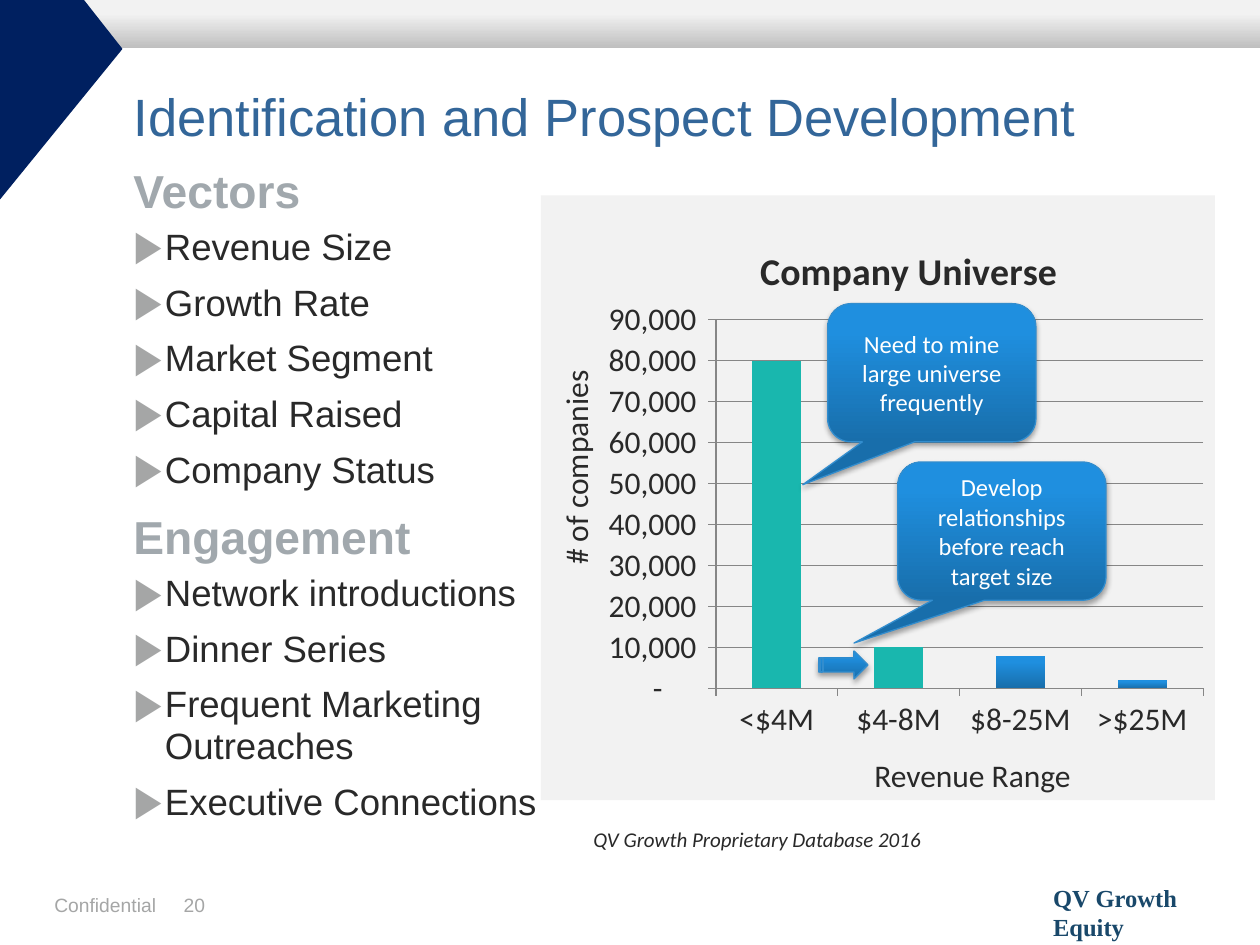
"""Build the identification and prospect development slide."""
import pptx
import pptx.chart.data
import pptx.dml.color
import pptx.enum.chart
import pptx.enum.shapes
import pptx.enum.text
import pptx.oxml
import pptx.oxml.ns
import pptx.util

Pt = pptx.util.Pt
Shape = pptx.enum.shapes.MSO_SHAPE
Anchor = pptx.enum.text.MSO_ANCHOR
qn = pptx.oxml.ns.qn

COLORS = {
    "navy": "002060", "title": "336699", "heading": "A1A8AD", "text": "292929",
    "muted": "A5A6A6", "panel": "F2F2F2", "band": "BFBFBF", "white": "FFFFFF",
    "brand": "19486A", "teal": "19B7AE", "deep": "186EAB", "bright": "1F8FDF",
    "edge": "328DCE", "grid": "868686",
}
SECTIONS = {
    "Vectors": ["Revenue Size", "Growth Rate", "Market Segment", "Capital Raised",
                "Company Status"],
    "Engagement": ["Network introductions", "Dinner Series",
                   "Frequent Marketing Outreaches", "Executive Connections"],
}
UNIVERSE = {"<$4M": 80000, "$4-8M": 10000, "$8-25M": 8000, ">$25M": 2000}
HEADING = {"line_spacing": 0.75, "space_after": Pt(6)}
ITEM = {"line_spacing": 0.95, "space_after": Pt(8)}
FLUSH = dict.fromkeys(("margin_left", "margin_top", "margin_right", "margin_bottom"), 0)


def assign(target, values):
    for name, value in values.items():
        setattr(target, name, value)


def rgb(color):
    return pptx.dml.color.RGBColor.from_string(COLORS[color])


def style_font(font, face, size, color, **values):
    assign(font, {"name": face, "size": Pt(size), **values})
    font.color.rgb = rgb(color)


def paint(fill, color):
    fill.solid()
    fill.fore_color.rgb = rgb(color)


def paint_gradient(fill, low, high, position):
    fill.gradient()
    fill.gradient_angle = 90
    for stop, color, place in zip(fill.gradient_stops, (low, high), (0, position)):
        stop.color.rgb = rgb(color)
        stop.position = place


def add_span(para, words, *font, **values):
    span = para.add_run()
    span.text = words
    style_font(span.font, *font, **values)


def add_text(page, bounds, words, face, size, color, frame=None, **values):
    box = page.shapes.add_textbox(*map(Pt, bounds))
    assign(box.text_frame, {"word_wrap": True, **(frame or {})})
    add_span(box.text_frame.paragraphs[0], words, face, size, color, **values)
    return box


def add_plain(page, bounds, color, line=None):
    box = page.shapes.add_shape(Shape.RECTANGLE, *map(Pt, bounds))
    box.shadow.inherit = False
    paint(box.fill, color)
    if line:
        box.line.color.rgb = rgb(line)
        box.line.width = Pt(2)
    else:
        box.line.fill.background()
    return box


def add_corner(page):
    builder = page.shapes.build_freeform(0, 0, scale=Pt(1))
    builder.add_line_segments([(47.5, 0), (70.5, 28), (0, 114.5)], close=True)
    corner = builder.convert_to_shape()
    corner.shadow.inherit = False
    paint(corner.fill, "navy")
    corner.line.fill.background()


def add_glossy(page, kind, bounds):
    shape = page.shapes.add_shape(kind, *map(Pt, bounds))
    paint_gradient(shape.fill, "deep", "bright", 0.8)
    shape.line.color.rgb = rgb("edge")
    shape.line.width = Pt(0.75)
    shape.shadow.inherit = False
    effects = shape._element.spPr.find(qn("a:effectLst"))
    effects.append(pptx.oxml.parse_xml(
        f'<a:outerShdw {pptx.oxml.ns.nsdecls("a")} blurRad="{Pt(3.1)}" '
        f'dist="{Pt(1.8)}" dir="5400000" rotWithShape="0"><a:srgbClr val="000000">'
        '<a:alpha val="35000"/></a:srgbClr></a:outerShdw>'))
    return shape


def add_callout(page, left, top, tip, words):
    callout = add_glossy(page, Shape.ROUNDED_RECTANGULAR_CALLOUT, (left, top, 119, 79))
    for index, value in enumerate((tip, 0.81, 0.17)):
        callout.adjustments[index] = value
    assign(callout.text_frame, {"word_wrap": True, "vertical_anchor": Anchor.MIDDLE})
    para = callout.text_frame.paragraphs[0]
    para.alignment = pptx.enum.text.PP_ALIGN.CENTER
    add_span(para, words, "Calibri", 14, "white")


def add_bullet(para):
    properties = para._p.get_or_add_pPr()
    properties.set("marL", str(Pt(18)))
    properties.set("indent", str(-Pt(18)))
    for tag, inner in (
            ("buClr", f'><a:srgbClr val="{COLORS["muted"]}"/></a:buClr>'),
            ("buSzPct", ' val="120000"/>'),
            ("buFont", ' typeface="Arial"/>'),
            ("buChar", ' char="▶"/>')):
        properties.append(pptx.oxml.parse_xml(
            f'<a:{tag} {pptx.oxml.ns.nsdecls("a")}{inner}'))


def add_outline(page):
    box = page.shapes.add_textbox(*map(Pt, (76.3, 100, 249, 391)))
    frame = box.text_frame
    assign(frame, {"word_wrap": True, **FLUSH})
    para = frame.paragraphs[0]
    for number, (heading, items) in enumerate(SECTIONS.items()):
        if number:
            para = frame.add_paragraph()
            para.space_before = Pt(9)
        assign(para, HEADING)
        add_span(para, heading, "Arial", 26.4, "heading", bold=True)
        for item in items:
            para = frame.add_paragraph()
            add_bullet(para)
            assign(para, ITEM)
            add_span(para, item, "Arial", 20.9, "text")


def set_layout(parent, **values):
    layout = parent.find(qn("c:layout"))
    if layout is None:
        layout = pptx.oxml.parse_xml(f'<c:layout {pptx.oxml.ns.nsdecls("c")}/>')
        parent.insert(0, layout)
    parts = "".join(f'<c:{name} val="{value}"/>' for name, value in values.items())
    layout.append(pptx.oxml.parse_xml(
        f'<c:manualLayout {pptx.oxml.ns.nsdecls("c")}>{parts}</c:manualLayout>'))


def add_universe_chart(page):
    data = pptx.chart.data.CategoryChartData()
    data.categories = list(UNIVERSE)
    data.add_series("Series 1", list(UNIVERSE.values()))
    chart = page.shapes.add_chart(pptx.enum.chart.XL_CHART_TYPE.COLUMN_CLUSTERED,
                                  *map(Pt, (337.7, 116.6, 357, 314.6)), data).chart
    chart.has_legend = False
    style_font(chart.font, "Calibri", 18, "text")
    title = chart.chart_title
    add_span(title.text_frame.paragraphs[0], "Company Universe",
             "Calibri", 21.6, "text", bold=True)
    set_layout(title._element, xMode="edge", yMode="edge", x=0.26, y=0.06)
    set_layout(chart._chartSpace.chart.plotArea, layoutTarget="inner", xMode="edge",
               yMode="edge", x=0.2, y=0.21, w=0.78, h=0.67)
    outside = pptx.enum.chart.XL_TICK_MARK.OUTSIDE
    values = chart.value_axis
    assign(values, {"minimum_scale": 0, "maximum_scale": 90000, "major_unit": 10000,
                    "has_major_gridlines": True})
    assign(values.tick_labels, {
        "number_format": r'_-* #,##0_-;\-* #,##0_-;_-* "-"??_-;_-@_',
        "number_format_is_linked": False})
    for axis in (values, chart.category_axis):
        axis.major_tick_mark = outside
        axis.format.line.color.rgb = rgb("grid")
    values.major_gridlines.format.line.color.rgb = rgb("grid")
    plot = chart.plots[0]
    assign(plot, {"gap_width": 150, "vary_by_categories": False})
    series = plot.series[0]
    paint_gradient(series.format.fill, "deep", "bright", 0.8)
    for index in range(2):
        paint(series.points[index].format.fill, "teal")


def main():
    deck = pptx.Presentation()
    assign(deck, {"slide_width": Pt(720), "slide_height": Pt(540)})
    page = deck.slides.add_slide(deck.slide_layouts[6])
    fitted = {"word_wrap": False,
              "auto_size": pptx.enum.text.MSO_AUTO_SIZE.SHAPE_TO_FIT_TEXT}
    band = add_plain(page, (0, 0, 720, 27.4), "band")
    paint_gradient(band.fill, "band", "panel", 0.72)
    add_corner(page)
    add_text(page, (105, 510.5, 45, 21), "20", "Arial", 11, "muted", FLUSH)
    add_text(page, (31, 510.5, 68, 21), "Confidential", "Arial", 11, "muted", FLUSH)
    title = add_text(page, (76.3, 31.7, 618, 73.4), "Identification and Prospect Development",
                     "Arial", 30, "title", {**FLUSH, "vertical_anchor": Anchor.MIDDLE})
    title.text_frame.paragraphs[0].line_spacing = 0.9
    add_plain(page, (309, 111.6, 385.2, 345.6), "panel")
    add_universe_chart(page)
    add_outline(page)
    add_callout(page, 473, 173.5, -0.62, "Need to mine large universe frequently")
    add_callout(page, 513, 264, -0.71, "Develop relationships before reach target size")
    add_glossy(page, Shape.STRIPED_RIGHT_ARROW, (468, 372, 28, 16))
    label = add_text(page, (265.7, 252, 126.7, 29), "# of companies",
                     "Calibri", 18, "text", fitted)
    label.rotation = 270
    add_text(page, (492.5, 428.4, 129, 29), "Revenue Range", "Calibri", 18, "text", fitted)
    add_plain(page, (604, 485.3, 108, 49), "white", "white")
    add_text(page, (594.7, 501, 128, 24.5), "QV Growth Equity",
             "Times New Roman", 14, "brand", fitted, bold=True)
    add_text(page, (332, 468.7, 204.5, 21.6), "QV Growth Proprietary Database 2016",
             "Calibri", 12, "text", fitted, italic=True)
    deck.save("out.pptx")


if __name__ == "__main__":
    main()
